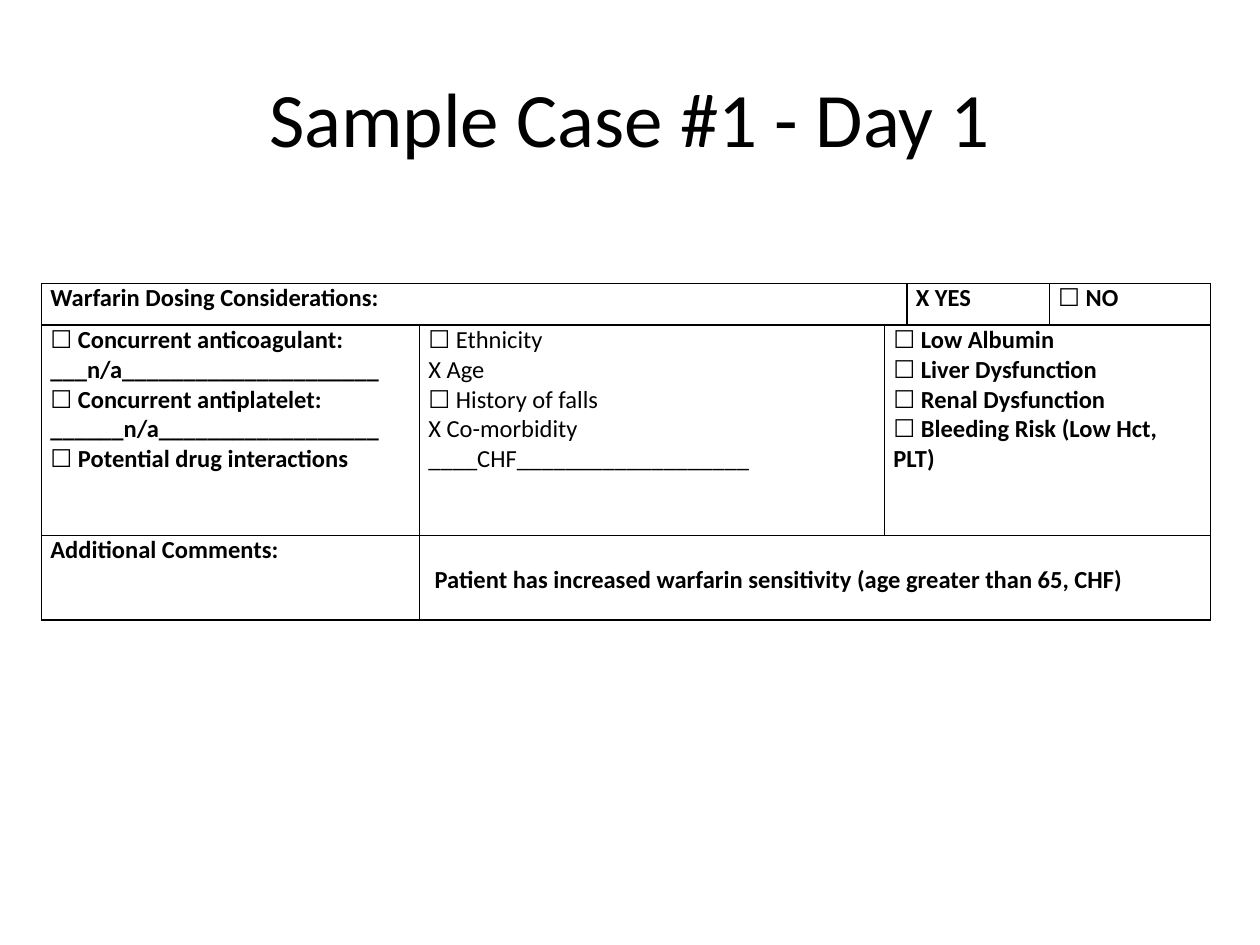
"""Build the warfarin dosing considerations slide for a sample case."""
from lxml.etree import SubElement
from pptx import Presentation
from pptx.dml.color import RGBColor as Rgb
from pptx.enum.text import MSO_ANCHOR as Anchor, PP_ALIGN as Align
from pptx.oxml.ns import qn
from pptx.util import Inches, Pt

THEME = {
    "ink": "000000",
    "paper": "FFFFFF",
    "font": "Calibri",
    "title_size": 44,
    "cell_size": 14,
    "border": 1,
}
SLIDE = (10, 7.5)
TITLE = "Sample Case #1 - Day 1"
TITLE_AREA = (0.05, 0.04, 0.9, 1 / 6)
TABLE_ORIGIN = (0.033, 0.3)
COLUMNS = (3, 3.69, 0.14, 1.13, 1.28)
ROWS = (0.33, 1.67, 0.67)
MARGINS = {"margin_left": 0.07, "margin_right": 0.07, "margin_top": 0, "margin_bottom": 0}

CELLS = [
    {"row": 0, "column": 0, "span": 3, "lines": ["Warfarin Dosing Considerations:"]},
    {"row": 0, "column": 3, "lines": ["X YES"]},
    {"row": 0, "column": 4, "lines": ["☐ NO"]},
    {"row": 1, "column": 0, "lines": [
        "☐ Concurrent anticoagulant:",
        "___n/a_____________________",
        "☐ Concurrent antiplatelet:",
        "______n/a__________________",
        "☐ Potential drug interactions",
    ]},
    {"row": 1, "column": 1, "bold": False, "space_after": 6, "lines": [
        "☐ Ethnicity",
        "X Age",
        "☐ History of falls",
        "X Co-morbidity ____CHF___________________",
    ]},
    {"row": 1, "column": 2, "span": 3, "lines": [
        "☐ Low Albumin",
        "☐ Liver Dysfunction",
        "☐ Renal Dysfunction",
        "☐ Bleeding Risk (Low Hct, PLT)",
    ]},
    {"row": 2, "column": 0, "lines": ["Additional Comments:"]},
    {"row": 2, "column": 1, "span": 4,
     "margins": {"margin_left": 0.12, "margin_top": 0.24},
     "lines": ["Patient has increased warfarin sensitivity (age greater than 65, CHF)"]},
]


def apply(target, values):
    for name, value in values.items():
        setattr(target, name, value)


def write(frame, lines, size, bold=False, align=Align.LEFT):
    for index, line in enumerate(lines):
        para = frame.add_paragraph() if index else frame.paragraphs[0]
        para.alignment = align
        span = para.add_run()
        span.text = line
        apply(span.font, {"name": THEME["font"], "size": Pt(size), "bold": bold})
        span.font.color.rgb = Rgb.from_string(THEME["ink"])


def style_cell(cell):
    properties = cell._tc.get_or_add_tcPr()
    for side in ("lnL", "lnR", "lnT", "lnB"):
        line = SubElement(properties, qn(f"a:{side}"), w=str(Pt(THEME["border"])))
        fill = SubElement(line, qn("a:solidFill"))
        SubElement(fill, qn("a:srgbClr"), val=THEME["ink"])
    cell.fill.solid()
    cell.fill.fore_color.rgb = Rgb.from_string(THEME["paper"])


def add_title(page):
    area = [Inches(share * SLIDE[i % 2]) for i, share in enumerate(TITLE_AREA)]
    frame = page.shapes.add_textbox(*area).text_frame
    apply(frame, {"word_wrap": True, "vertical_anchor": Anchor.MIDDLE})
    write(frame, [TITLE], THEME["title_size"], align=Align.CENTER)


def add_considerations(page):
    origin = [Inches(share * side) for share, side in zip(TABLE_ORIGIN, SLIDE)]
    size = Inches(sum(COLUMNS)), Inches(sum(ROWS))
    table = page.shapes.add_table(len(ROWS), len(COLUMNS), *origin, *size).table
    apply(table, {"first_row": False, "horz_banding": False})
    for column, width in zip(table.columns, COLUMNS):
        column.width = Inches(width)
    for row, height in zip(table.rows, ROWS):
        row.height = Inches(height)
    for cell in table.iter_cells():
        style_cell(cell)
    for item in CELLS:
        row, column, reach = item["row"], item["column"], item.get("span", 1)
        cell = table.cell(row, column)
        if reach > 1:
            cell.merge(table.cell(row, column + reach - 1))
        margins = MARGINS | item.get("margins", {})
        apply(cell, {name: Inches(value) for name, value in margins.items()})
        write(cell.text_frame, item["lines"], THEME["cell_size"], item.get("bold", True))
        cell.text_frame.paragraphs[-1].space_after = Pt(item.get("space_after", 0))


def main():
    deck = Presentation()
    apply(deck, {"slide_width": Inches(SLIDE[0]), "slide_height": Inches(SLIDE[1])})
    page = deck.slides.add_slide(deck.slide_layouts[6])
    add_considerations(page)
    add_title(page)
    deck.save("out.pptx")


if __name__ == "__main__":
    main()
